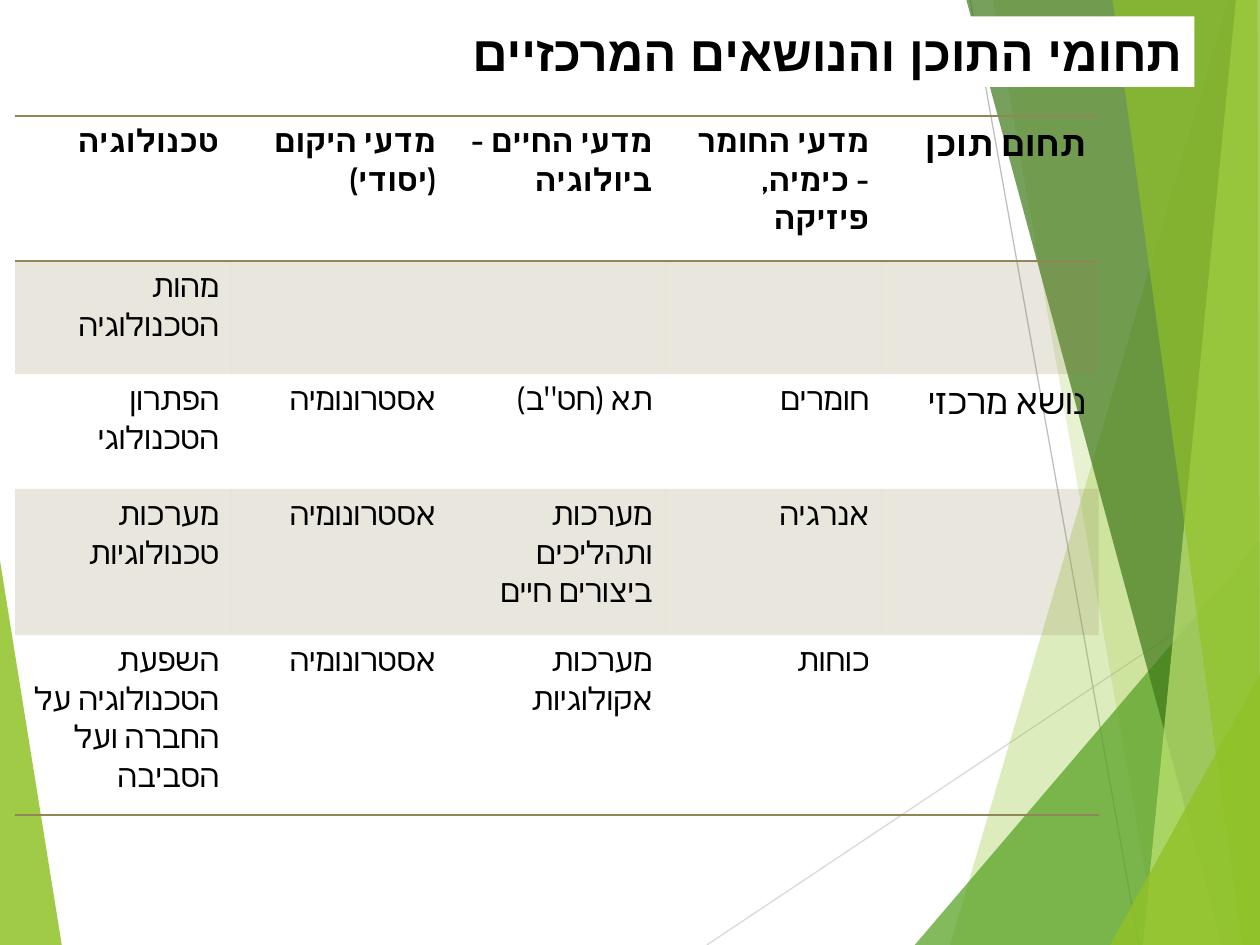
import pptx
import pptx.dml.color
import pptx.enum.shapes
import pptx.enum.text
import pptx.oxml
import pptx.oxml.ns
import pptx.util
from lxml import etree

Inches, Pt = pptx.util.Inches, pptx.util.Pt
qn = pptx.oxml.ns.qn

# Content
TITLE = "תחומי התוכן והנושאים המרכזיים"
ROWS = [
    ["טכנולוגיה", "מדעי היקום (יסודי)", "מדעי החיים - ביולוגיה",
     "מדעי החומר - כימיה, פיזיקה", "תחום תוכן"],
    ["מהות הטכנולוגיה", "", "", "", ""],
    ["הפתרון הטכנולוגי", "אסטרונומיה", "תא (חט\"ב)", "חומרים", "נושא מרכזי"],
    ["מערכות טכנולוגיות", "אסטרונומיה", "מערכות ותהליכים ביצורים חיים", "אנרגיה", ""],
    ["השפעת הטכנולוגיה על החברה ועל הסביבה", "אסטרונומיה", "מערכות אקולוגיות",
     "כוחות", ""],
]

# Layout, in inches
W, H = 10, 7.5
TITLE_BOX = (0.48, 0.13, 9, 0.56)
TABLE_LEFT, TABLE_TOP, COL_W = 0.12, 0.92, 1.72
ROW_HEIGHTS = [1.15, 0.9, 0.91, 1.16, 1.43]

THEME = {
    "title_font": "Arial", "table_font": "Cabin",
    "title_size": 28, "label_size": 20, "cell_size": 18,
    "text": "000000", "paper": "FFFFFF", "accent": "918655", "band_alpha": 20,
    "border_width": 1, "ray_width": 0.75,
    "lime": "90C226", "green": "54A021", "forest": "3F7819", "pale": "C0E474",
}

# Background: rays (start, end, colour) and facets (corners, colour, opacity %)
LEFT_FACET = ([(0, 4.45), (0.49, H), (0, H)], "lime", 85)
RAYS = [((5.61, H), (W, 4.57), "D9D9D9"), ((7.7, 0), (9.04, H), "BFBFBF")]
RIGHT_FACETS = [
    ([(9.75, 0), (7.54, H), (W, H), (W, 0)], "lime", 30),
    ([(7.88, 0), (9.19, H), (W, H), (W, 0)], "lime", 20),
    ([(7.26, H), (W, 4.29), (W, H)], "green", 72),
    ([(7.67, 0), (9.7, H), (W, H), (W, 0)], "forest", 70),
    ([(9.81, 0), (9.07, H), (W, H), (W, 0)], "pale", 70),
    ([(8.83, 0), (9.86, H), (W, H), (9.98, 0)], "lime", 65),
    ([(8.81, H), (W, 5.35), (W, H)], "lime", 80),
]


def rgb(value):
    return pptx.dml.color.RGBColor.from_string(value)


def fill_solid(fill, color, props, alpha=100):
    fill.solid()
    fill.fore_color.rgb = rgb(color)
    if alpha < 100:
        clr = props.find(qn("a:solidFill"))[0]
        etree.SubElement(clr, qn("a:alpha"), val=str(alpha * 1000))


def add_facet(s, corners, color, alpha):
    points = [(Inches(x), Inches(y)) for x, y in corners]
    builder = s.shapes.build_freeform(*points[0])
    builder.add_line_segments(points[1:], close=True)
    sp = builder.convert_to_shape()
    sp.shadow.inherit = False
    sp.line.fill.background()
    fill_solid(sp.fill, THEME[color], sp._element.spPr, alpha)


def add_ray(s, start, end, color):
    ends = [Inches(v) for v in start + end]
    line = s.shapes.add_connector(pptx.enum.shapes.MSO_CONNECTOR.STRAIGHT, *ends)
    line.line.color.rgb = rgb(color)
    line.line.width = Pt(THEME["ray_width"])
    etree.SubElement(line._element.spPr, qn("a:effectLst"))


def write_rtl(tf, text, font, size, bold):
    tf.text = text
    p = tf.paragraphs[0]
    p.alignment = pptx.enum.text.PP_ALIGN.RIGHT
    p._p.get_or_add_pPr().set("rtl", "1")
    for r in p.runs:
        r.font.name, r.font.size, r.font.bold = font, Pt(size), bold
        r.font.color.rgb = rgb(THEME["text"])
        etree.SubElement(r._r.get_or_add_rPr(), qn("a:cs"), typeface=font)


def add_border(cell, side):
    line = etree.Element(qn("a:" + side), w=str(Pt(THEME["border_width"])))
    fill = etree.SubElement(line, qn("a:solidFill"))
    etree.SubElement(fill, qn("a:srgbClr"), val=THEME["accent"])
    tcPr = cell._tc.get_or_add_tcPr()
    tcPr.insert(len(tcPr.findall(qn("a:lnT"))), line)


def add_content_table(s):
    n_rows, n_cols = len(ROWS), len(ROWS[0])
    frame = s.shapes.add_table(
        n_rows, n_cols, Inches(TABLE_LEFT), Inches(TABLE_TOP),
        Inches(COL_W * n_cols), Inches(sum(ROW_HEIGHTS)))
    table = frame.table
    table.horz_banding = False
    # "No style, no grid"
    table._tbl.tblPr.find(qn("a:tableStyleId")).text = "{2D5ABB26-0587-4C30-8999-92F81FD0307C}"
    for col in table.columns:
        col.width = Inches(COL_W)
    for i, (row, height) in enumerate(zip(ROWS, ROW_HEIGHTS)):
        table.rows[i].height = Inches(height)
        for j, text in enumerate(row):
            cell = table.cell(i, j)
            size = THEME["label_size" if j == n_cols - 1 else "cell_size"]
            write_rtl(cell.text_frame, text, THEME["table_font"], size, i == 0)
            if i % 2:
                fill_solid(cell.fill, THEME["accent"], cell._tc.tcPr, THEME["band_alpha"])
            else:
                cell.fill.background()
            if i == 0:
                add_border(cell, "lnT")
            if i in (0, n_rows - 1):
                add_border(cell, "lnB")


def place_title(s):
    title = s.shapes.title
    title.left, title.top, title.width, title.height = map(Inches, TITLE_BOX)
    fill_solid(title.fill, THEME["paper"], title._element.spPr)
    tf = title.text_frame
    write_rtl(tf, TITLE, THEME["title_font"], THEME["title_size"], True)
    tf.word_wrap = True
    tf.auto_size = pptx.enum.text.MSO_AUTO_SIZE.NONE
    tf.vertical_anchor = pptx.enum.text.MSO_ANCHOR.MIDDLE
    s.shapes._spTree.append(title._element)  # bring to front


def main():
    prs = pptx.Presentation()
    prs.slide_width, prs.slide_height = Inches(W), Inches(H)
    s = prs.slides.add_slide(prs.slide_layouts[5])  # Title Only
    add_facet(s, *LEFT_FACET)
    for ray in RAYS:
        add_ray(s, *ray)
    for facet in RIGHT_FACETS:
        add_facet(s, *facet)
    add_content_table(s)
    place_title(s)
    prs.save("out.pptx")


if __name__ == "__main__":
    main()
